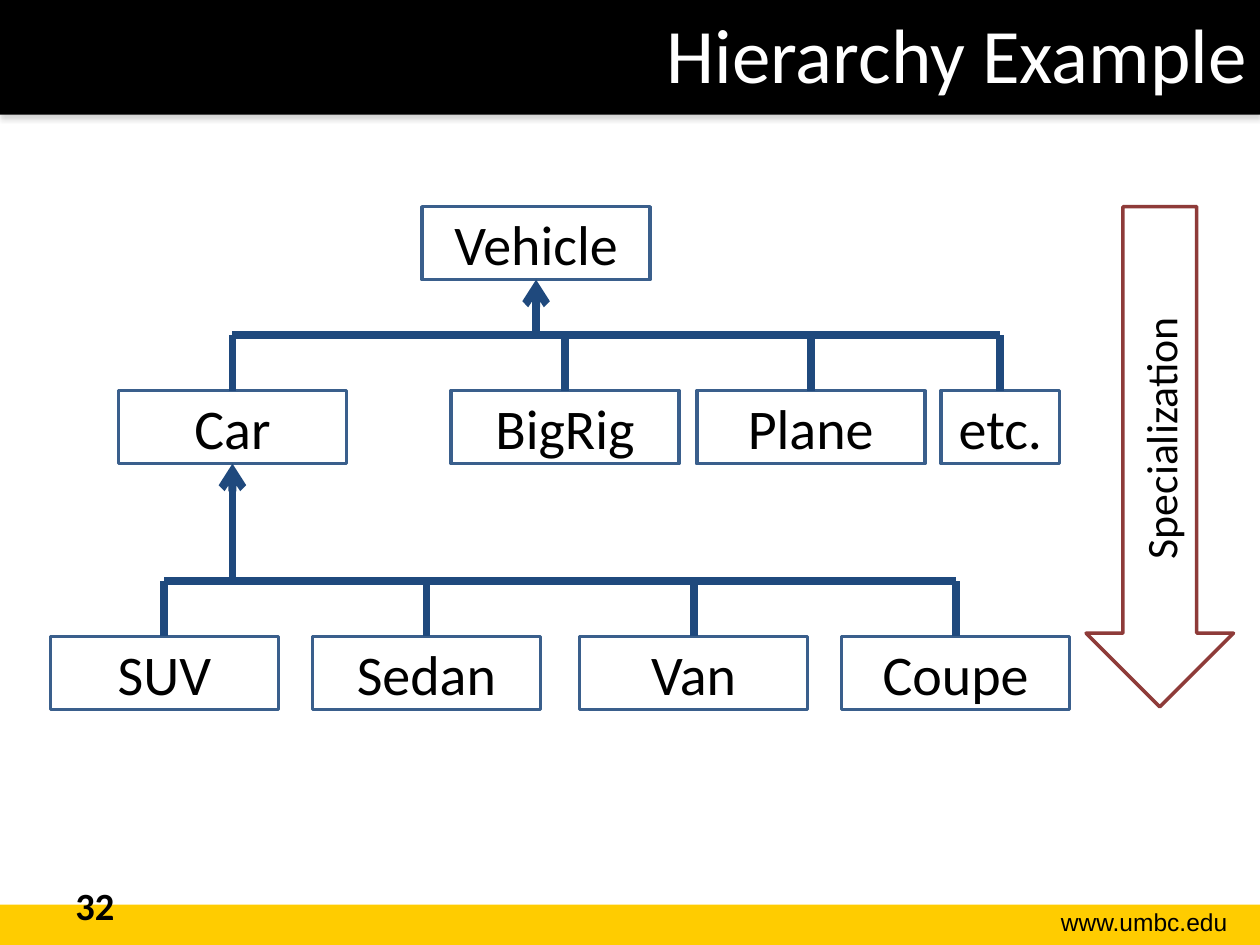
from lxml import etree
from pptx import Presentation
from pptx.dml.color import RGBColor
from pptx.enum.shapes import MSO_CONNECTOR, MSO_SHAPE
from pptx.enum.text import MSO_ANCHOR, PP_ALIGN
from pptx.oxml import parse_xml
from pptx.oxml.ns import nsdecls, qn
from pptx.util import Inches, Pt

RECT, LEFT_ARROW = MSO_SHAPE.RECTANGLE, MSO_SHAPE.LEFT_ARROW
STRAIGHT = MSO_CONNECTOR.STRAIGHT
TOP, MIDDLE = MSO_ANCHOR.TOP, MSO_ANCHOR.MIDDLE
LEFT, CENTER, RIGHT = PP_ALIGN.LEFT, PP_ALIGN.CENTER, PP_ALIGN.RIGHT
TOP_SIDE, BOTTOM_SIDE = 0, 2

WIDTH, HEIGHT = 10, 7.5
CLASS_W, ETC_W, CLASS_H = 1.81, 0.94, 0.58
VEHICLE_Y, KINDS_Y, CARS_Y = 1.64, 3.1, 5.05
DROP = 0.44  # from a horizontal branch down to the classes below it


def color(hex_code):
    return RGBColor.from_string(hex_code)


def write(shape, text, size, align, hex_code="000000", anchor=MIDDLE, font="Calibri", bold=False):
    frame = shape.text_frame
    frame.word_wrap = True
    frame.vertical_anchor = anchor
    frame.text = text
    paragraph = frame.paragraphs[0]
    paragraph.alignment = align
    paragraph.font.name = font
    paragraph.font.size = Pt(size)
    paragraph.font.bold = bold
    paragraph.font.color.rgb = color(hex_code)


prs = Presentation()
prs.slide_width, prs.slide_height = Inches(WIDTH), Inches(HEIGHT)
slide = prs.slides.add_slide(prs.slide_layouts[5])
shapes = slide.shapes
title = shapes.title

# Header and footer bands
bands = []
for y, height, fill in ((HEIGHT - 0.32, 0.32, "FFCC00"), (0, 0.91, "000000")):
    band = shapes.add_shape(RECT, 0, Inches(y), Inches(WIDTH), Inches(height))
    band.shadow.inherit = False
    band.fill.solid()
    band.fill.fore_color.rgb = color(fill)
    band.line.fill.background()
    bands.append(band)
header = bands[-1]
header._element.spPr.find(qn("a:effectLst")).append(parse_xml(
    f'<a:outerShdw {nsdecls("a")} blurRad="{Pt(3.1)}" dist="{Pt(1.8)}" dir="5400000" rotWithShape="0">'
    '<a:srgbClr val="808080"><a:alpha val="35000"/></a:srgbClr></a:outerShdw>'))

address = shapes.add_textbox(Inches(7.85), Inches(7.15), Inches(1.99), Inches(0.34))
write(address, "www.umbc.edu", 14, RIGHT, anchor=TOP, font="Arial")

# The title stands in front of the header band
header._element.addnext(title._element)
title.left, title.top, title.width, title.height = 0, 0, Inches(WIDTH), Inches(1.25)
title.left, title.width = Inches(1), Inches(WIDTH - 1)
write(title, "Hierarchy Example", 44, RIGHT, "FFFFFF", TOP)

# Classes
classes = {}
for name, x, y, width in (
    ("Vehicle", 3.35, VEHICLE_Y, CLASS_W),
    ("Car", 0.94, KINDS_Y, CLASS_W),
    ("BigRig", 3.58, KINDS_Y, CLASS_W),
    ("Plane", 5.53, KINDS_Y, CLASS_W),
    ("etc.", 7.47, KINDS_Y, ETC_W),
    ("SUV", 0.4, CARS_Y, CLASS_W),
    ("Sedan", 2.48, CARS_Y, CLASS_W),
    ("Van", 4.6, CARS_Y, CLASS_W),
    ("Coupe", 6.68, CARS_Y, CLASS_W),
):
    box = shapes.add_shape(RECT, Inches(x), Inches(y), Inches(width), Inches(CLASS_H))
    box.shadow.inherit = False
    box.fill.background()
    box.line.color.rgb = color("3A5F8C")
    box.line.width = Pt(2)
    write(box, name, 32, CENTER)
    classes[name] = box

# Inheritance: a branch over the subclasses, a stem to each, an arrow to the parent
for parent_name, child_names in (
    ("Vehicle", ("Car", "BigRig", "Plane", "etc.")),
    ("Car", ("SUV", "Sedan", "Van", "Coupe")),
):
    parent = classes[parent_name]
    children = [classes[name] for name in child_names]
    branch_y = children[0].top - Inches(DROP)
    centers = [child.left + child.width // 2 for child in children]
    parent_x = parent.left + parent.width // 2

    branch = shapes.add_connector(STRAIGHT, centers[0], branch_y, centers[-1], branch_y)
    arrow = shapes.add_connector(STRAIGHT, parent_x, branch_y, parent_x, parent.top + parent.height)
    arrow.end_connect(parent, BOTTOM_SIDE)
    lines = [branch, arrow]
    for child, x in zip(children, centers):
        stem = shapes.add_connector(STRAIGHT, x, child.top, x, branch_y)
        stem.begin_connect(child, TOP_SIDE)
        lines.append(stem)
    for line in lines:
        line.line.color.rgb = color("1F497D")
        line.line.width = Pt(4.5)
        etree.SubElement(line._element.spPr, qn("a:effectLst"))
    etree.SubElement(arrow.line._get_or_add_ln(), qn("a:tailEnd"), type="arrow")

# Direction of specialization
direction = shapes.add_shape(LEFT_ARROW, Inches(7.22), Inches(3.04), Inches(3.97), Inches(1.17))
direction.rotation = 270
direction.shadow.inherit = False
direction.fill.background()
direction.line.color.rgb = color("8E3B39")
direction.line.width = Pt(2)
write(direction, "Specialization", 25, CENTER)

page_number = shapes.add_textbox(Inches(0.5), Inches(6.95), Inches(2.33), Inches(0.4))
write(page_number, "32", 22, LEFT, anchor=TOP, bold=True)

prs.save("out.pptx")
